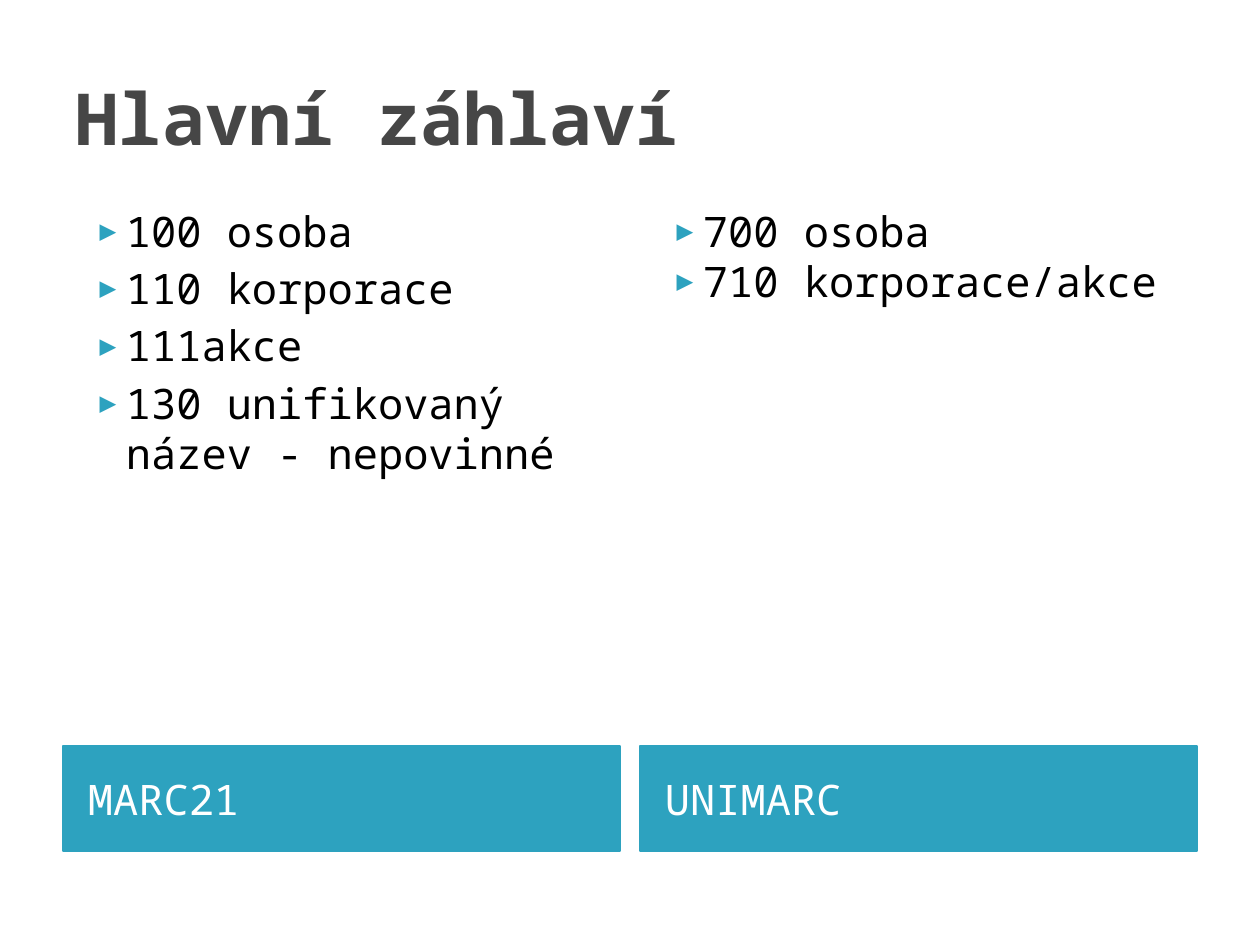
from lxml.etree import SubElement
from pptx import Presentation
from pptx.dml.color import RGBColor
from pptx.enum.shapes import MSO_SHAPE
from pptx.enum.text import MSO_ANCHOR, PP_ALIGN
from pptx.oxml.ns import qn
from pptx.util import Pt

SCALE = 914400 / 126
FONT = "Noto Sans Mono"
TEAL = "2DA2BF"


def px(n):
    return round(n * SCALE)


def color(code):
    return RGBColor.from_string(code)


def bullet(para):
    props = para._p.get_or_add_pPr()
    props.set("marL", str(px(50)))
    props.set("indent", str(px(-35)))
    tint = SubElement(props, qn("a:buClr"))
    SubElement(tint, qn("a:srgbClr"), val=TEAL)
    SubElement(props, qn("a:buSzPct"), val="68000")
    SubElement(props, qn("a:buFont"), typeface=FONT)
    SubElement(props, qn("a:buChar"), char="▶")


def write(shape, text, size=24, tone="000000", bold=False,
          anchor=MSO_ANCHOR.TOP, left=13, marks=False, gap=0):
    frame = shape.text_frame
    frame.word_wrap = True
    frame.vertical_anchor = anchor
    frame.margin_left = px(left)
    for i, line in enumerate(text.split("\n")):
        para = frame.add_paragraph() if i else frame.paragraphs[0]
        if marks:
            bullet(para)
        para.alignment = PP_ALIGN.LEFT
        if i and gap:
            para.space_before = Pt(gap)
        run = para.add_run()
        run.text = line
        font = run.font
        font.name, font.size, font.bold = FONT, Pt(size), bold
        font.color.rgb = color(tone)


def title(slide, box, text):
    shape = slide.shapes.add_textbox(*map(px, box))
    write(shape, text, size=41, tone="464646", bold=True,
          anchor=MSO_ANCHOR.MIDDLE)


def column(slide, box, name, items, gap):
    x, y, w, h = box
    foot = 105
    bar = slide.shapes.add_shape(
        MSO_SHAPE.RECTANGLE, px(x), px(y + h - foot), px(w), px(foot))
    bar.shadow.inherit = False
    bar.fill.solid()
    bar.fill.fore_color.rgb = color(TEAL)
    bar.line.color.rgb = color(TEAL)
    bar.line.width = Pt(0.75)
    write(bar, name, tone="FFFFFF", anchor=MSO_ANCHOR.MIDDLE, left=25)
    body = slide.shapes.add_textbox(px(x), px(y), px(w), px(h - foot - 4))
    write(body, "\n".join(items), marks=True, gap=gap)


def main():
    deck = Presentation()
    deck.slide_width, deck.slide_height = px(1260), px(945)
    slide = deck.slides.add_slide(deck.slide_layouts[6])
    title(slide, (63, 38, 1134, 157), "Hlavní záhlaví")
    lists = [
        ("MARC21", ["100 osoba", "110 korporace", "111akce",
                    "130 unifikovaný název - nepovinné"], 4),
        ("UNIMARC", ["700 osoba", "710 korporace/akce"], 0),
    ]
    for i, (name, items, gap) in enumerate(lists):
        column(slide, (63 + i * 577, 199, 557, 652), name, items, gap)
    deck.save("out.pptx")


if __name__ == "__main__":
    main()
